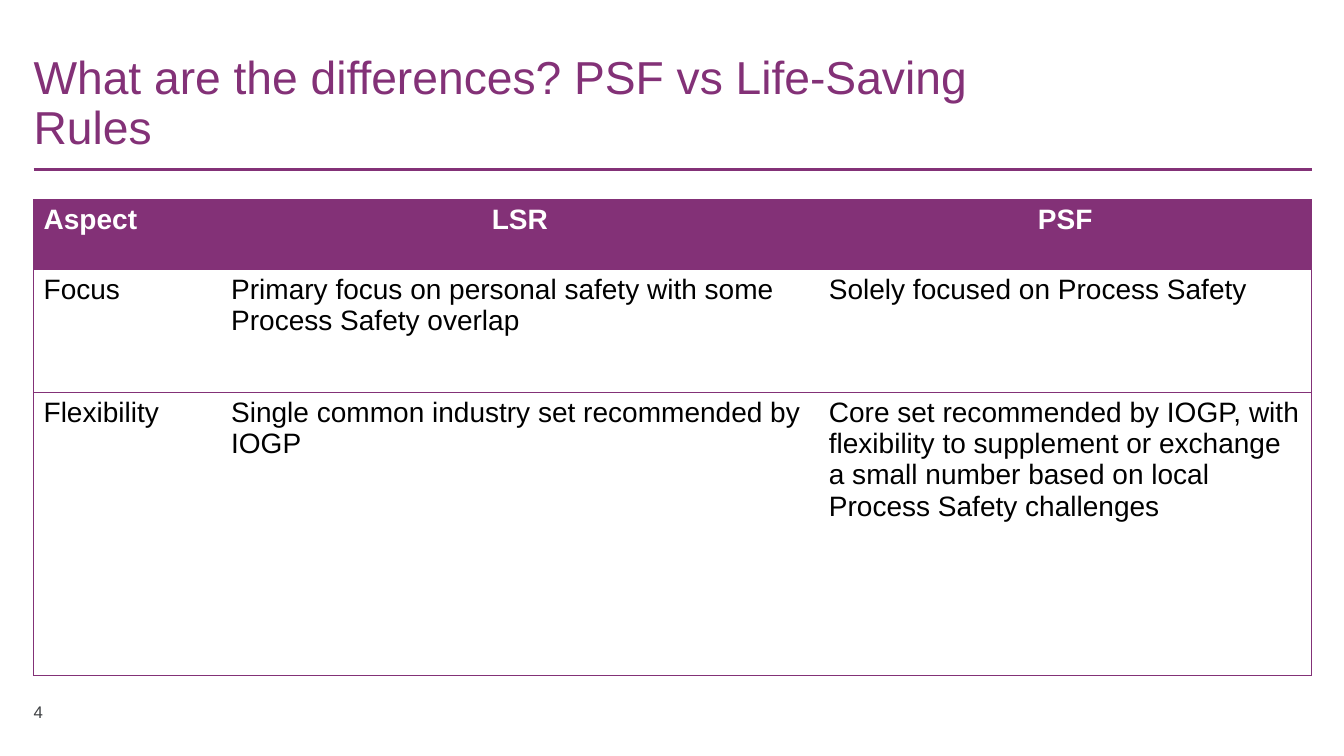
from dataclasses import dataclass
from typing import Any

from lxml import etree
from pptx import Presentation
from pptx import util as u
from pptx.dml.color import RGBColor
from pptx.enum import shapes, text
from pptx.oxml import ns

ROWS = [
    ("Aspect", "LSR", "PSF"),
    ("Focus",
     "Primary focus on personal safety with some Process Safety overlap",
     "Solely focused on Process Safety"),
    ("Flexibility",
     "Single common industry set recommended by IOGP",
     "Core set recommended by IOGP, with flexibility to supplement or exchange "
     "a small number based on local Process Safety challenges"),
]
COLUMN_WIDTHS = (5.58, 17.79, 14.67)
ROW_HEIGHTS = (3.68, 6.51, 14.99)


def colour(value):
    return RGBColor.from_string(value)


def write(frame, content, size, ink, font="Arial", bold=False, align=None, spacing=None):
    para = frame.paragraphs[0]
    para.alignment = align
    para.line_spacing = spacing
    span = para.add_run()
    span.text = content
    span.font.name = font
    span.font.size = u.Pt(size)
    span.font.bold = bold
    span.font.color.rgb = colour(ink)


def set_border(cell, sides, ink, width):
    """Draw the named sides (of L, R, T, B) and clear the others."""
    properties = cell._tc.get_or_add_tcPr()
    for position, side in enumerate("LRTB"):
        line = etree.Element(ns.qn(f"a:ln{side}"), w=str(u.Pt(width)))
        if side in sides:
            fill = etree.SubElement(line, ns.qn("a:solidFill"))
            etree.SubElement(fill, ns.qn("a:srgbClr"), val=ink)
        else:
            etree.SubElement(line, ns.qn("a:noFill"))
        properties.insert(position, line)


@dataclass
class Sheet:
    """The current slide on a 40 by 40 grid, with its colours."""
    deck: Any
    page: Any
    accent: str = "833177"
    paper: str = "FFFFFF"
    ink: str = "000000"
    muted: str = "3E4043"
    divisions: int = 40

    def across(self, columns):
        return u.Emu(round(self.deck.slide_width * columns / self.divisions))

    def down(self, rows):
        return u.Emu(round(self.deck.slide_height * rows / self.divisions))

    def place(self, left, top, width, height):
        return self.across(left), self.down(top), self.across(width), self.down(height)

    def rule(self, left, right, top, width):
        start, level, end = self.across(left), self.down(top), self.across(right)
        line = self.page.shapes.add_connector(
            shapes.MSO_CONNECTOR.STRAIGHT, start, level, end, level)
        line.line.color.rgb = colour(self.accent)
        line.line.width = u.Pt(width)
        etree.SubElement(line._element.spPr, ns.qn("a:effectLst"))

    def label(self, area, content, anchor, **style):
        box = self.page.shapes.add_textbox(*self.place(*area))
        frame = box.text_frame
        frame.word_wrap = True
        frame.margin_left = 0
        frame.vertical_anchor = anchor
        write(frame, content, **style)

    def table(self, left, top, widths, heights, rows, size):
        area = self.place(left, top, sum(widths), sum(heights))
        table = self.page.shapes.add_table(len(heights), len(widths), *area).table
        table.horz_banding = False
        for column, width in zip(table.columns, widths):
            column.width = self.across(width)
        for row, height in zip(table.rows, heights):
            row.height = self.down(height)
        last = len(widths) - 1
        for row, entries in enumerate(rows):
            header = row == 0
            for column, entry in enumerate(entries):
                cell = table.cell(row, column)
                cell.fill.solid()
                cell.fill.fore_color.rgb = colour(self.accent if header else self.paper)
                centred = header and column > 0
                write(cell.text_frame, entry, size=size, bold=header,
                      ink=self.paper if header else self.ink,
                      align=text.PP_ALIGN.CENTER if centred else None)
                sides = "TB" + "L" * (column == 0) + "R" * (column == last)
                set_border(cell, sides, self.accent, 0.5)


def main():
    deck = Presentation()
    deck.slide_width, deck.slide_height = u.Inches(13.33), u.Inches(7.5)
    sheet = Sheet(deck, deck.slides.add_slide(deck.slide_layouts[6]))
    sheet.rule(1, 39.04, 8.96, width=2)
    sheet.label((1, 36.85, 2.13, 1.6), "4", text.MSO_ANCHOR.MIDDLE,
                size=12, ink=sheet.muted)
    sheet.label((1, 3.15, 31.05, 5.28),
                "What are the differences? PSF vs Life-Saving Rules",
                text.MSO_ANCHOR.BOTTOM, size=33, ink=sheet.accent, spacing=0.9)
    sheet.table(1, 10.56, COLUMN_WIDTHS, ROW_HEIGHTS, ROWS, size=20)
    deck.save("out.pptx")


if __name__ == "__main__":
    main()
